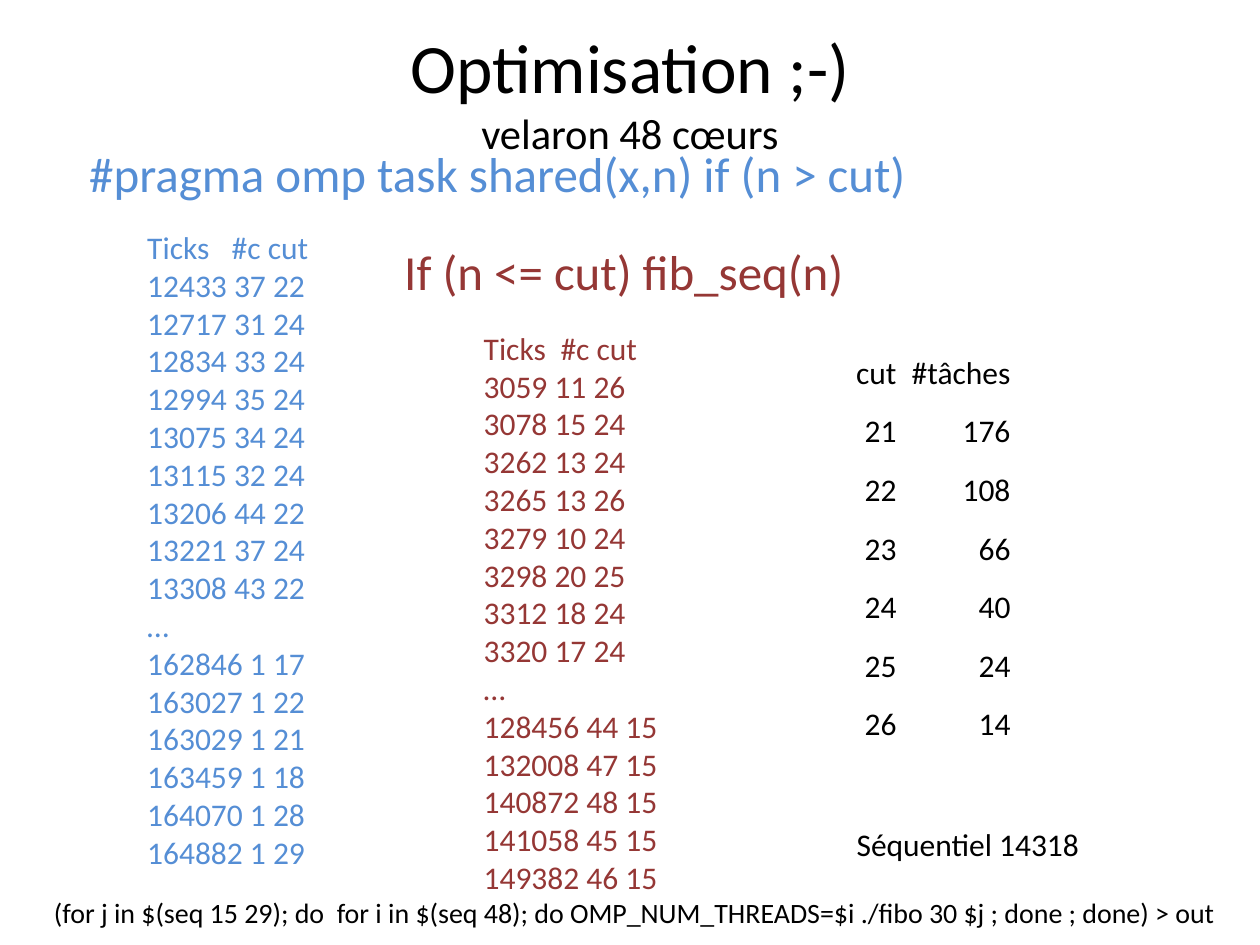
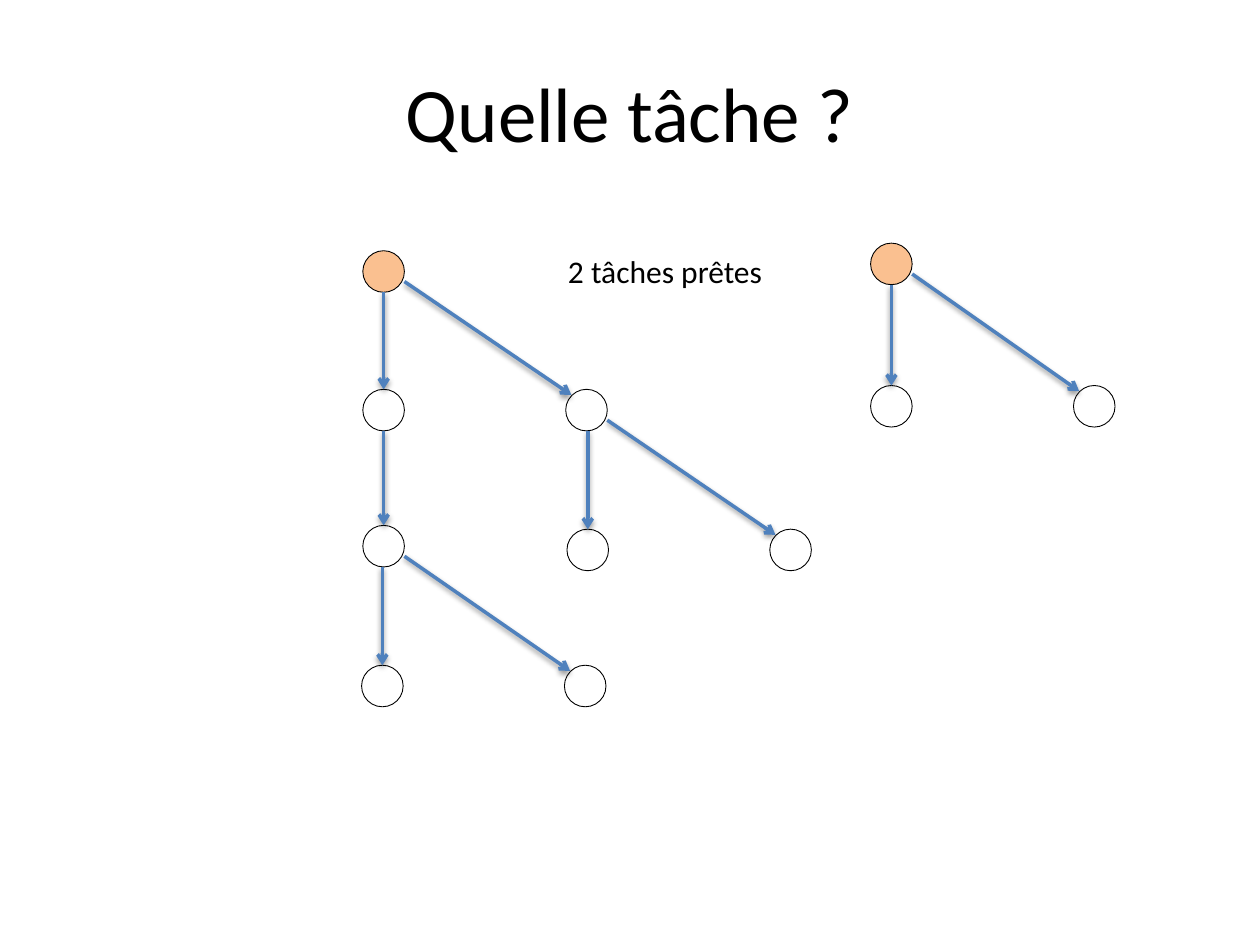
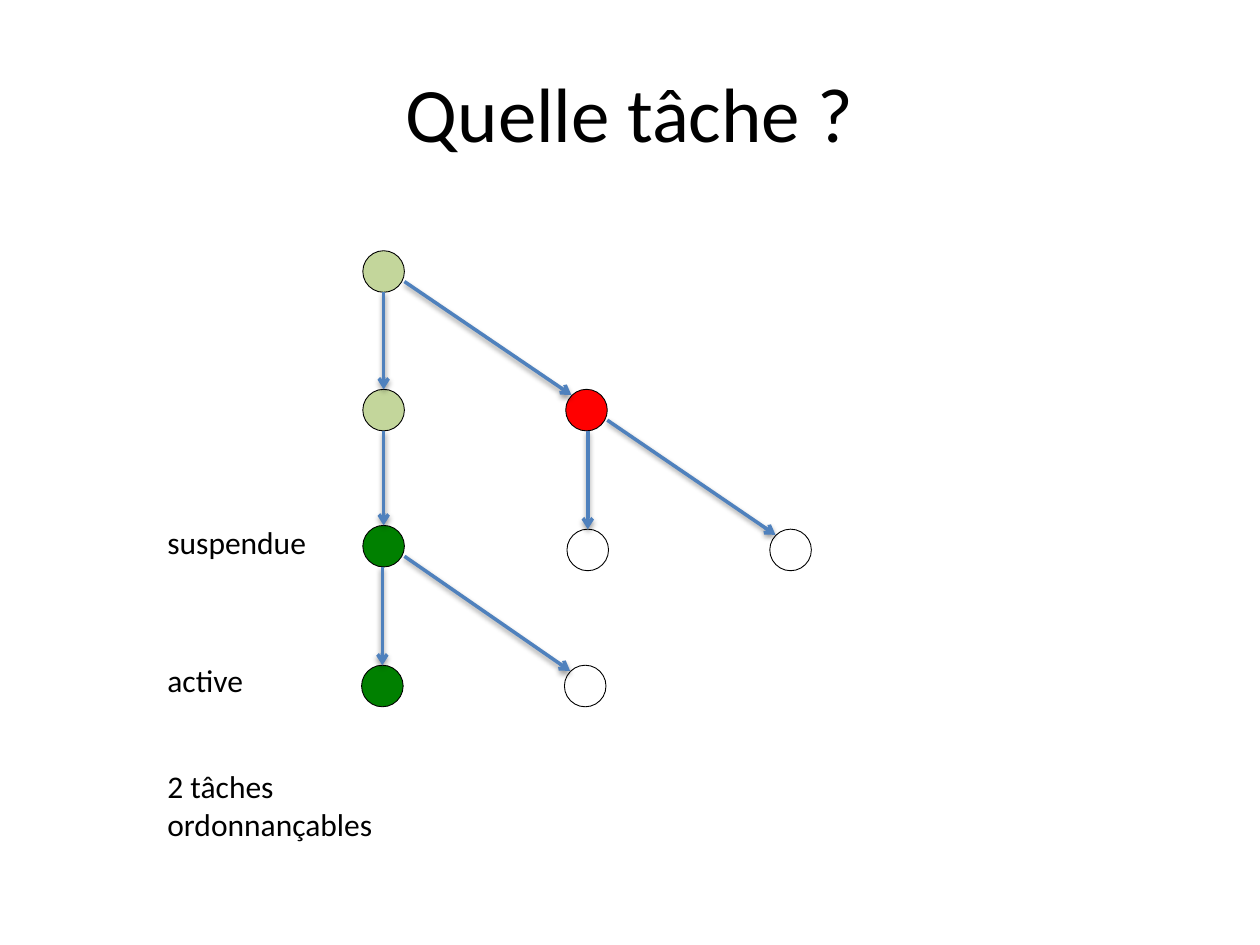
from lxml.etree import SubElement
from pptx import Presentation
from pptx.dml.color import RGBColor
from pptx.enum.shapes import MSO_CONNECTOR, MSO_SHAPE
from pptx.enum.text import MSO_ANCHOR, MSO_AUTO_SIZE, PP_ALIGN
from pptx.oxml.ns import qn
from pptx.util import Inches, Pt

# Shared style
FONT = "Calibri"
BLACK = RGBColor(0x00, 0x00, 0x00)
WHITE = RGBColor(0xFF, 0xFF, 0xFF)
BLUE = RGBColor(0x55, 0x8E, 0xD5)
DARK_RED = RGBColor(0x95, 0x37, 0x35)
ARROW_BLUE = RGBColor(0x4F, 0x81, 0xBD)
ORANGE = RGBColor(0xFA, 0xC0, 0x90)
LIGHT_GREEN = RGBColor(0xC3, 0xD6, 0x9B)
GREEN = RGBColor(0x00, 0x80, 0x00)
RED = RGBColor(0xFF, 0x00, 0x00)
NODE_SIZE = 0.33

# Slide 1 content
TASK_TIMES = [
    "Ticks\t#c cut", "12433 37 22", "12717 31 24", "12834 33 24", "12994 35 24",
    "13075 34 24", "13115 32 24", "13206 44 22", "13221 37 24", "13308 43 22", "…",
    "162846 1 17", "163027 1 22", "163029 1 21", "163459 1 18", "164070 1 28",
    "164882 1 29",
]
SEQUENTIAL_TIMES = [
    "Ticks\t#c cut", "3059 11 26", "3078 15 24", "3262 13 24", "3265 13 26",
    "3279 10 24", "3298 20 25", "3312 18 24", "3320 17 24", "…", "128456 44 15",
    "132008 47 15", "140872 48 15", "141058 45 15", "149382 46 15",
]
TASK_COUNTS = [
    ("cut", "#tâches"), ("21", "176"), ("22", "108"), ("23", "66"),
    ("24", "40"), ("25", "24"), ("26", "14"),
]
COMMAND = ("(for j in $(seq 15 29); do  for i in $(seq 48); do "
           "OMP_NUM_THREADS=$i ./fibo 30 $j ; done ; done) > out")

# Task trees: node positions (left, top) and parent-child edges
MAIN_NODES = {
    "root": (2.88, 1.99), "left": (2.88, 3.09), "left2": (2.88, 4.17),
    "right": (4.49, 3.09), "right_a": (4.5, 4.2), "right_b": (6.11, 4.2),
    "left2_a": (2.87, 5.28), "left2_b": (4.48, 5.28),
}
MAIN_EDGES = [
    ("root", "left"), ("left", "left2"), ("root", "right"), ("right", "right_a"),
    ("right", "right_b"), ("left2", "left2_a"), ("left2", "left2_b"),
]
SMALL_NODES = {"root": (6.91, 1.93), "left": (6.91, 3.06), "right": (8.52, 3.06)}
SMALL_EDGES = [("root", "left"), ("root", "right")]
READY_FILLS = {"root": ORANGE}
SMALL_FILLS = {"root": ORANGE, "left": WHITE, "right": WHITE}
RUNNING_FILLS = {
    "root": LIGHT_GREEN, "left": LIGHT_GREEN, "left2": GREEN, "right": RED,
    "right_a": WHITE, "right_b": WHITE, "left2_a": GREEN,
}


def style(paragraph, size, color=BLACK):
    font = paragraph.font
    font.name, font.size, font.color.rgb = FONT, Pt(size), color


def add_titled_slide(presentation, lines, top=0.26):
    """Add a slide whose title holds (text, size) lines."""
    slide = presentation.slides.add_slide(presentation.slide_layouts[5])
    title = slide.shapes.title
    title.left, title.top = Inches(0.5), Inches(top)
    title.width, title.height = Inches(9), Inches(1.25)
    frame = title.text_frame
    frame.auto_size = MSO_AUTO_SIZE.NONE
    frame.vertical_anchor = MSO_ANCHOR.MIDDLE
    paragraph = frame.paragraphs[0]
    paragraph.alignment = PP_ALIGN.CENTER
    style(paragraph, lines[0][1])
    for index, (text, size) in enumerate(lines):
        if index:
            paragraph.add_line_break()
        run = paragraph.add_run()
        run.text = text
        run.font.size = Pt(size)
    return slide


def add_text(slide, box, lines, size=18, color=BLACK, wrap=True, tab=None):
    frame = slide.shapes.add_textbox(*map(Inches, box)).text_frame
    frame.word_wrap = wrap
    for index, line in enumerate(lines):
        paragraph = frame.add_paragraph() if index else frame.paragraphs[0]
        paragraph.add_run().text = line
        style(paragraph, size, color)
    if tab:
        properties = frame.paragraphs[0]._p.get_or_add_pPr()
        tab_list = properties.makeelement(qn("a:tabLst"), {})
        SubElement(tab_list, qn("a:tab"), pos=str(Inches(tab)), algn="l")
        properties.insert(0, tab_list)


def add_count_table(slide):
    table = slide.shapes.add_table(
        len(TASK_COUNTS), 2, *map(Inches, (6.22, 2.65, 1.81, 3.26))).table
    table.first_row = table.horz_banding = False
    for row, values in enumerate(TASK_COUNTS):
        for column, value in enumerate(values):
            cell = table.cell(row, column)
            cell.fill.background()
            cell.vertical_anchor = MSO_ANCHOR.BOTTOM
            cell.margin_left = cell.margin_right = cell.margin_top = Inches(0.01)
            cell.margin_bottom = 0
            cell.text = value
            paragraph = cell.text_frame.paragraphs[0]
            paragraph.alignment = PP_ALIGN.RIGHT
            style(paragraph, 18)


def add_arrow(slide, start, end):
    arrow = slide.shapes.add_connector(
        MSO_CONNECTOR.STRAIGHT, *map(Inches, (*start, *end)))
    arrow.line.color.rgb = ARROW_BLUE
    arrow.line.width = Pt(2)
    SubElement(arrow.line._get_or_add_ln(), qn("a:tailEnd"), type="arrow")
    # Soft shadow straight below the line
    effects = SubElement(arrow._element.spPr, qn("a:effectLst"))
    shadow = SubElement(effects, qn("a:outerShdw"), blurRad=str(Pt(3.1)),
                        dist=str(Pt(1.6)), dir="5400000", rotWithShape="0")
    color = SubElement(shadow, qn("a:srgbClr"), val=str(BLACK))
    SubElement(color, qn("a:alpha"), val="38000")


def add_tree(slide, nodes, edges, fills):
    radius = NODE_SIZE / 2
    for name, (left, top) in nodes.items():
        node = slide.shapes.add_shape(
            MSO_SHAPE.OVAL, *map(Inches, (left, top, NODE_SIZE, NODE_SIZE)))
        node.shadow.inherit = False
        node.line.color.rgb = BLACK
        node.line.width = Pt(0.5)
        if name in fills:
            node.fill.solid()
            node.fill.fore_color.rgb = fills[name]
        else:
            node.fill.background()
    for parent, child in edges:
        parent_x, parent_y = (value + radius for value in nodes[parent])
        child_x, child_y = (value + radius for value in nodes[child])
        if child_x - parent_x > NODE_SIZE:  # sloping edge to a right child
            add_arrow(slide, (parent_x + radius, parent_y + 0.08),
                      (child_x - 0.12, child_y - 0.12))
        else:
            add_arrow(slide, (child_x, parent_y + radius),
                      (child_x, child_y - radius))


def main():
    presentation = Presentation()
    presentation.slide_width, presentation.slide_height = Inches(10), Inches(7.5)

    # Slide 1: timings
    slide = add_titled_slide(
        presentation, [("Optimisation ;-)", 39.6), ("velaron 48 cœurs", 24.3)], top=0.3)
    slide.shapes.title.text_frame.margin_bottom = Inches(0.45)
    add_text(slide, (0.61, 1.09, 6.92, 0.57),
             ["#pragma omp task shared(x,n) if (n > cut)"], 28, BLUE)
    add_text(slide, (1.07, 1.76, 1.65, 5.25), TASK_TIMES, color=BLUE, tab=0.67)
    add_text(slide, (3.74, 2.56, 1.58, 5.25), SEQUENTIAL_TIMES,
             color=DARK_RED, tab=0.61)
    add_text(slide, (3.11, 1.87, 6.92, 0.57),
             ["If (n <= cut) fib_seq(n)"], 28, DARK_RED)
    add_count_table(slide)
    add_text(slide, (0.33, 7.06, 11.11, 0.37), [COMMAND], 16)
    add_text(slide, (6.7, 6.5, 2.09, 0.4), ["Séquentiel 14318"])

    # Slide 2: ready tasks
    question = [("Quelle tâche ?", 44)]
    slide = add_titled_slide(presentation, question)
    add_tree(slide, MAIN_NODES, MAIN_EDGES, READY_FILLS)
    add_text(slide, (4.41, 1.95, 1.77, 0.4), ["2 tâches prêtes"], wrap=False)
    add_tree(slide, SMALL_NODES, SMALL_EDGES, SMALL_FILLS)

    # Slide 3: suspended and active tasks
    slide = add_titled_slide(presentation, question)
    add_tree(slide, MAIN_NODES, MAIN_EDGES, RUNNING_FILLS)
    add_text(slide, (1.23, 6.04, 1.85, 0.71), ["2 tâches", "ordonnançables"], wrap=False)
    add_text(slide, (1.23, 4.1, 1.31, 0.4), ["suspendue"], wrap=False)
    add_text(slide, (1.23, 5.2, 0.81, 0.4), ["active"], wrap=False)

    presentation.save("out.pptx")


if __name__ == "__main__":
    main()
